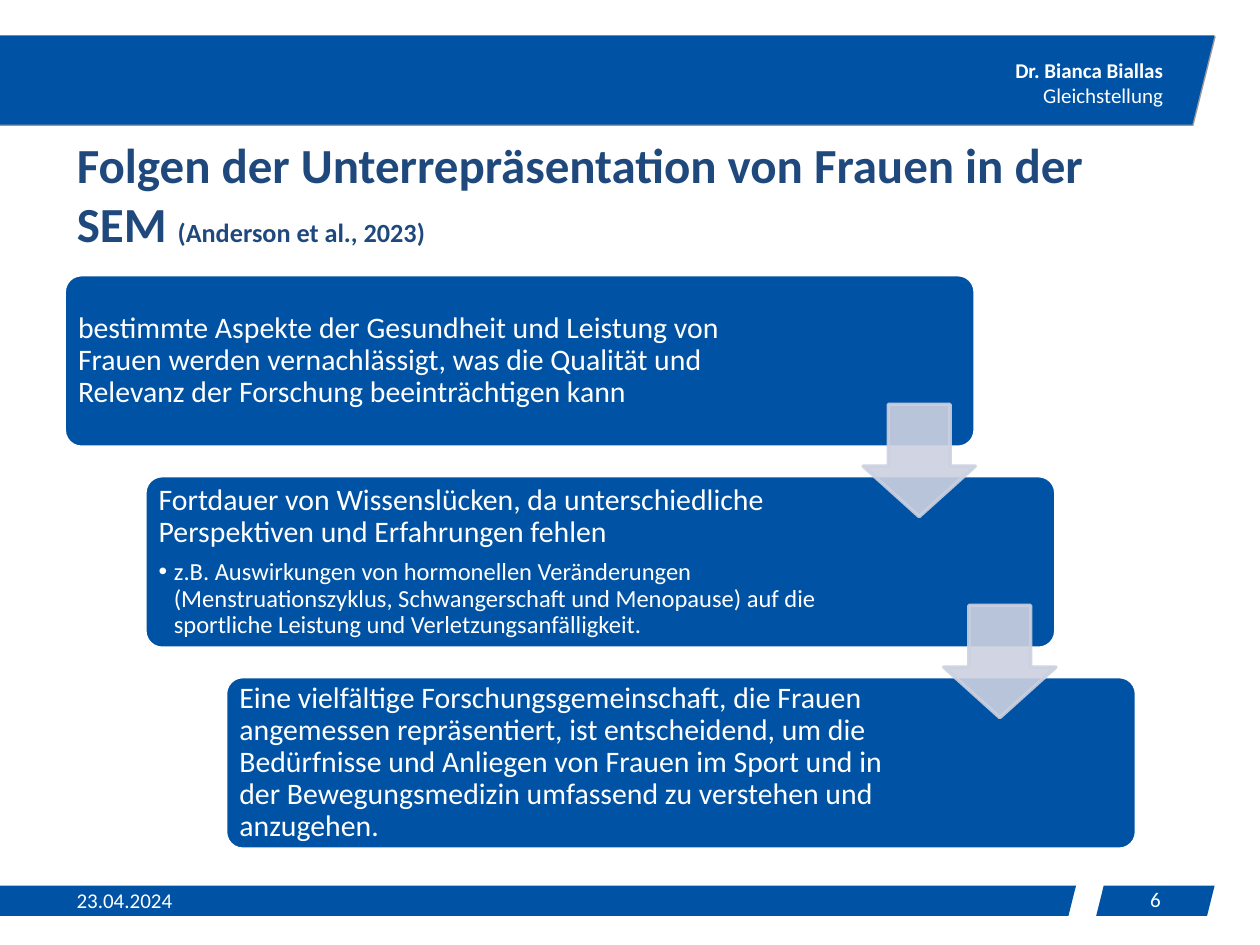
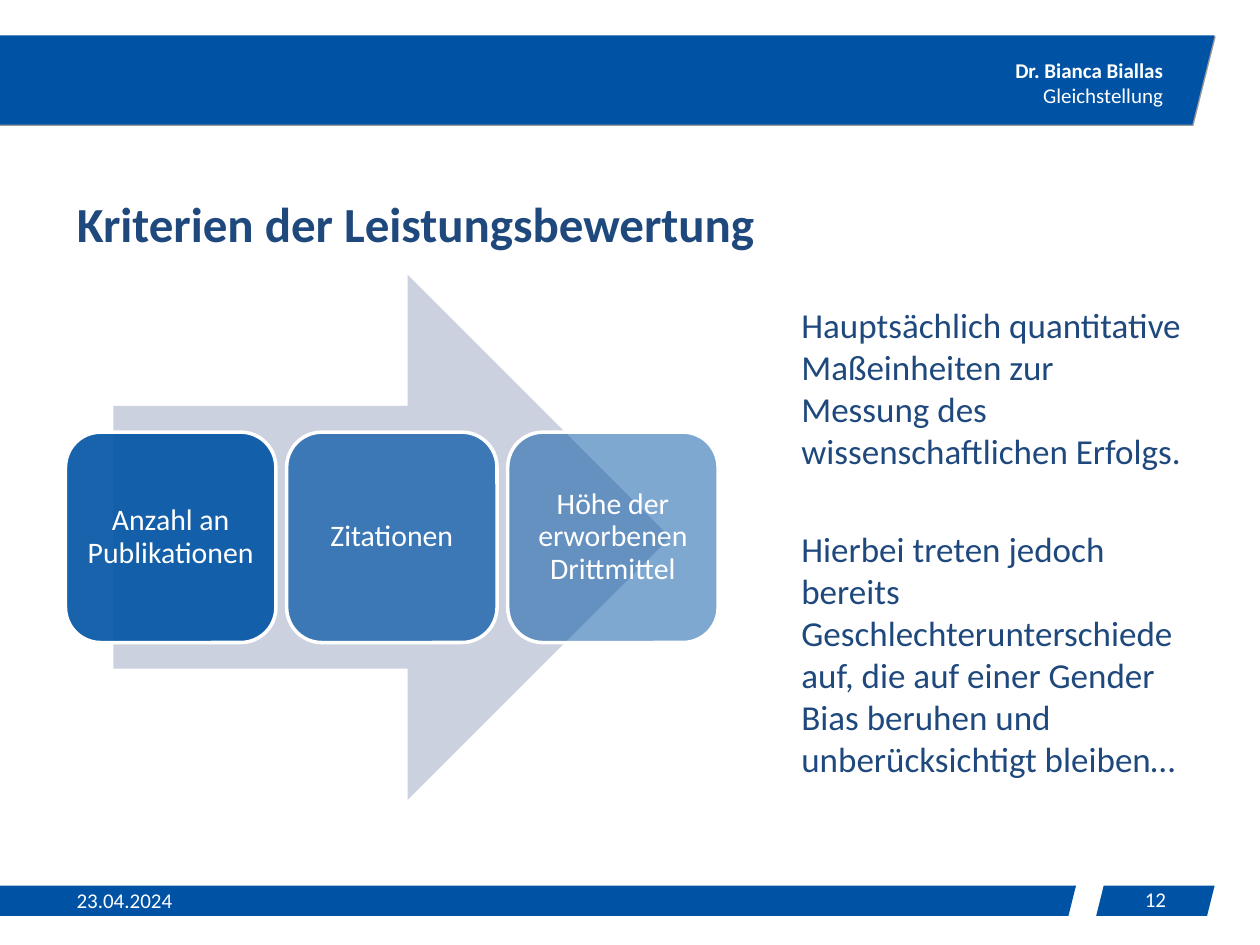
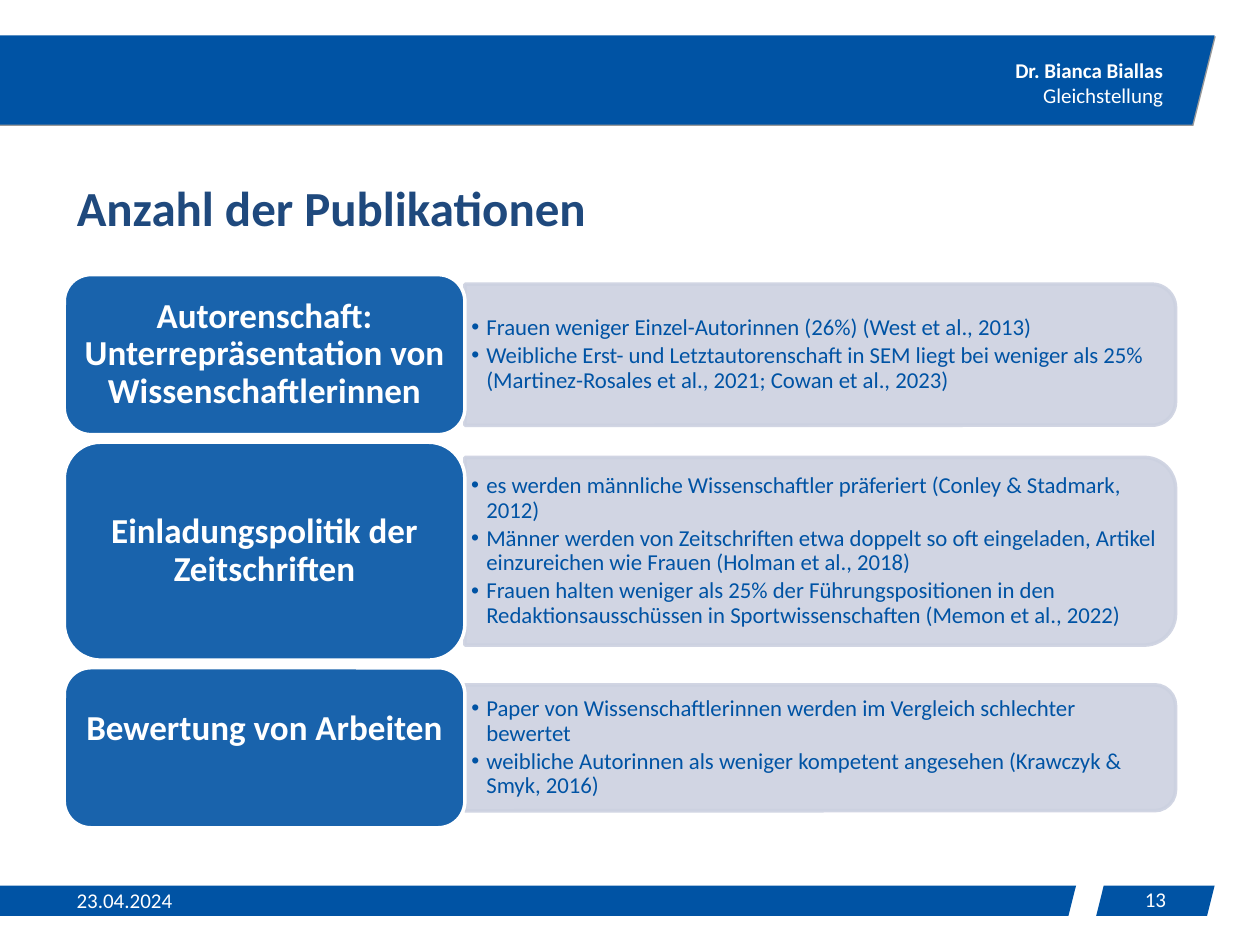
"""Builds three slides on equality in sports and exercise medicine research."""
from lxml import etree
from pptx import Presentation
from pptx.dml.color import RGBColor
from pptx.enum import shapes, text
from pptx.oxml import ns
from pptx.util import Inches, Pt

BLUE, NAVY, PALE, WHITE = "0053A4", "1F497D", "CCD1E0", "FFFFFF"
FONT = "Calibri"
KIND = shapes.MSO_SHAPE
LEFT, CENTER, RIGHT = text.PP_ALIGN.LEFT, text.PP_ALIGN.CENTER, text.PP_ALIGN.RIGHT
TOP, MIDDLE, BOTTOM = text.MSO_ANCHOR.TOP, text.MSO_ANCHOR.MIDDLE, text.MSO_ANCHOR.BOTTOM

DATE = "23.04.2024"
SPEAKER = ["Dr. Bianca Biallas", "Gleichstellung"]
BANDS = [(-0.2, 7.03, 8.74, 0.24), (8.7, 7.03, 0.94, 0.24), (-0.2, 0.28, 9.84, 0.71)]

CONSEQUENCES = [
    ("bestimmte Aspekte der Gesundheit und Leistung von Frauen werden vernachlässigt, "
     "was die Qualität und Relevanz der Forschung beeinträchtigen kann", None, 1.47),
    ("Fortdauer von Wissenslücken, da unterschiedliche Perspektiven und Erfahrungen fehlen",
     "z.B. Auswirkungen von hormonellen Veränderungen (Menstruationszyklus, Schwangerschaft "
     "und Menopause) auf die sportliche Leistung und Verletzungsanfälligkeit.", 1.6),
    ("Eine vielfältige Forschungsgemeinschaft, die Frauen angemessen repräsentiert, ist "
     "entscheidend, um die Bedürfnisse und Anliegen von Frauen im Sport und in der "
     "Bewegungsmedizin umfassend zu verstehen und anzugehen.", None, 1.6),
]
CRITERIA = [("Anzahl an Publikationen", 90), ("Zitationen", 70),
            ("Höhe der erworbenen Drittmittel", 50)]
ASSESSMENT = [
    "Hauptsächlich quantitative Maßeinheiten zur Messung des wissenschaftlichen Erfolgs.",
    "Hierbei treten jedoch bereits Geschlechterunterschiede auf, die auf einer Gender Bias "
    "beruhen und unberücksichtigt bleiben…",
]
PUBLICATIONS = [
    ("Autorenschaft: Unterrepräsentation von Wissenschaftlerinnen", 1.27, 1.12, 0.04, [
        "Frauen weniger Einzel-Autorinnen (26%) (West et al., 2013)",
        "Weibliche Erst- und Letztautorenschaft in SEM liegt bei weniger als 25% "
        "(Martinez-Rosales et al., 2021; Cowan et al., 2023)"]),
    ("Einladungspolitik der Zeitschriften", 1.73, 1.49, 0.04, [
        "es werden männliche Wissenschaftler präferiert (Conley & Stadmark, 2012)",
        "Männer werden von Zeitschriften etwa doppelt so oft eingeladen, Artikel "
        "einzureichen wie Frauen (Holman et al., 2018)",
        "Frauen halten weniger als 25% der Führungspositionen in den "
        "Redaktionsausschüssen in Sportwissenschaften (Memon et al., 2022)"]),
    ("Bewertung von Arbeiten", 1.27, 1.0, 0.34, [
        "Paper von Wissenschaftlerinnen werden im Vergleich schlechter bewertet",
        "weibliche Autorinnen als weniger kompetent angesehen (Krawczyk & Smyk, 2016)"]),
]


def rgb(value):
    """Turns a hex string into a colour."""
    return RGBColor.from_string(value)


def box(*lengths):
    """Converts left, top, width and height to inches."""
    return [Inches(length) for length in lengths]


def sub(parent, tag, **attributes):
    """Adds a drawing element with attributes."""
    return etree.SubElement(parent, ns.qn(tag), {k: str(v) for k, v in attributes.items()})


def add_figure(slide, kind, place, fill, line=None, opacity=100, adjust=()):
    """Adds a flat preset shape; pale outlines share the opacity of the fill."""
    figure = slide.shapes.add_shape(kind, *box(*place))
    figure.shadow.inherit = False
    for index, value in enumerate(adjust):
        figure.adjustments[index] = value
    figure.fill.solid()
    figure.fill.fore_color.rgb = rgb(fill)
    if line:
        figure.line.color.rgb = rgb(line)
        figure.line.width = Pt(2)
    else:
        figure.line.fill.background()
    if opacity < 100:
        for color in figure.element.spPr.iter(ns.qn("a:srgbClr")):
            if color.get("val") == fill:
                sub(color, "a:alpha", val=opacity * 1000)
    return figure


def style(paragraph, size, color, bold=False, align=LEFT, spacing=None):
    """Formats a paragraph and its runs."""
    paragraph.alignment = align
    paragraph.line_spacing = spacing
    for run in paragraph.runs:
        run.font.name, run.font.size, run.font.bold = FONT, Pt(size), bold
        run.font.color.rgb = rgb(color)


def bullet(paragraph, sign="•", indent=0.12):
    """Sets a hanging bullet, or none when the sign is empty."""
    properties = paragraph._p.get_or_add_pPr()
    properties.set("marL", str(Inches(indent)))
    properties.set("indent", str(-Inches(indent)))
    if sign:
        sub(properties, "a:buFont", typeface="Arial")
        sub(properties, "a:buChar", char=sign)
    else:
        sub(properties, "a:buNone")


def write(frame, lines, size, color, gap=0, sign=None, anchor=MIDDLE, margins=None, **look):
    """Fills a frame with one paragraph per line."""
    frame.word_wrap = True
    frame.auto_size = text.MSO_AUTO_SIZE.NONE
    frame.vertical_anchor = anchor
    if margins:
        (frame.margin_left, frame.margin_top,
         frame.margin_right, frame.margin_bottom) = box(*margins)
    frame.text = "\n".join(lines)
    for index, paragraph in enumerate(frame.paragraphs):
        if sign is not None:
            bullet(paragraph, sign, 0.12 if sign else 0)
        style(paragraph, size, color, **look)
        if index:
            paragraph.space_before = Pt(gap)


def add_text(slide, place, lines, size, color, **look):
    """Adds a text box."""
    frame = slide.shapes.add_textbox(*box(*place)).text_frame
    write(frame, lines, size, color, **look)
    return frame


def add_bands(slide, layout):
    """Draws the bands and the speaker, then moves them to the layout."""
    for place in BANDS:
        band = add_figure(slide, KIND.PARALLELOGRAM, place, BLUE)
        layout.shapes.element.append(band.element)
    effects = band.element.spPr.find(ns.qn("a:effectLst"))
    shadow = sub(effects, "a:outerShdw", blurRad=0, dist=Pt(1), dir=45 * 60000)
    sub(sub(shadow, "a:srgbClr", val="000000"), "a:alpha", val=40000)
    speaker = add_text(slide, (7.94, 0.41, 1.39, 0.5), SPEAKER, 12, WHITE,
                       anchor=TOP, align=RIGHT)
    speaker.word_wrap = False
    speaker.paragraphs[0].runs[0].font.bold = True
    layout.shapes.element.append(slide.shapes[-1].element)


def add_page(deck, heading, number, top=1.43, body=False):
    """Adds a slide with its title, date and page number."""
    slide = deck.slides.add_slide(deck.slide_layouts[1])
    title = slide.shapes.title
    title.left, title.top, title.width, title.height = box(0.51, top, 8.98, 0.62)
    write(title.text_frame, [heading], 28, NAVY, bold=True, anchor=BOTTOM)
    if not body:
        content = slide.placeholders[1].element
        content.getparent().remove(content)
    add_text(slide, (0.51, 6.98, 1.1, 0.32), [DATE], 12, WHITE)
    add_text(slide, (8.7, 6.98, 0.94, 0.31), [str(number)], 12, WHITE, align=CENTER)
    return slide


def add_consequences(deck):
    """Adds the staircase of consequences."""
    slide = add_page(deck, "Folgen der Unterrepräsentation von Frauen in der SEM ", 6)
    citation = slide.shapes.title.text_frame.paragraphs[0].add_run()
    citation.text = "(Anderson et al., 2023)"
    citation.font.name, citation.font.size, citation.font.bold = FONT, Pt(15), True
    citation.font.color.rgb = rgb(NAVY)
    steps = [(0.51 + 0.64 * i, 2.18 + 3.19 / 2 * i) for i in range(len(CONSEQUENCES))]
    for (left, top), (statement, example, right) in zip(steps, CONSEQUENCES):
        step = add_figure(slide, KIND.ROUNDED_RECTANGLE, (left, top, 7.23, 1.37),
                          BLUE, WHITE, adjust=[0.1])
        write(step.text_frame, [statement], 17, WHITE, spacing=0.9,
              margins=(0.07, 0.07, right, 0.07))
        if example:
            detail = step.text_frame.add_paragraph()
            detail.text = example
            bullet(detail)
            style(detail, 14, WHITE, spacing=0.9)
            detail.space_before = Pt(6)
    for left, top in steps[:-1]:
        add_figure(slide, KIND.DOWN_ARROW, (left + 6.34, top + 1.03, 0.89, 0.89),
                   PALE, PALE, 90, [0.55, 0.45])
    return slide


def add_criteria(deck):
    """Adds the criteria on an arrow, with the assessment beside it."""
    slide = add_page(deck, "Kriterien der Leistungsbewertung", 12, body=True)
    add_figure(slide, KIND.RIGHT_ARROW, (0.9, 2.18, 4.42, 4.17), PALE)
    for index, (criterion, opacity) in enumerate(CRITERIA):
        tile = add_figure(slide, KIND.ROUNDED_RECTANGLE,
                          (0.52 + 1.755 * index, 3.43, 1.67, 1.67), BLUE, WHITE, opacity)
        write(tile.text_frame, [criterion], 17, WHITE, align=CENTER, spacing=0.9,
              margins=[0.07] * 4)
    body = slide.placeholders[1]
    body.left, body.top, body.width, body.height = box(6.26, 2.36, 3.23, 4.17)
    write(body.text_frame, ASSESSMENT, 20, NAVY, gap=32, sign="", anchor=TOP)
    body.text_frame.paragraphs[0].space_before = Pt(0)


def add_publications(deck):
    """Adds the topics with their findings, row by row."""
    slide = add_page(deck, "Anzahl der Publikationen", 13, top=1.31)
    left, topic_width, panel_width, top = 0.51, 3.18, 5.64, 2.18
    panel_left = left + topic_width
    for topic, height, depth, bottom, findings in PUBLICATIONS:
        middle = top + height / 2
        panel = add_figure(
            slide, KIND.ROUND_2_SAME_RECTANGLE,
            (panel_left + (panel_width - depth) / 2, middle - panel_width / 2,
             depth, panel_width), PALE, PALE, 90)
        panel.rotation = 90
        add_text(slide, (panel_left, middle - 0.45 * depth,
                         panel_width - 0.05 * depth, 0.9 * depth),
                 findings, 13, BLUE, gap=2, sign="•", spacing=0.9,
                 margins=(0.05, 0.03, 0.05, 0.03))
        label = add_figure(slide, KIND.ROUNDED_RECTANGLE, (left, top, topic_width, height),
                           BLUE, WHITE, 90)
        write(label.text_frame, [topic], 20, WHITE, bold=True, align=CENTER, spacing=0.9,
              margins=(0.08, 0.04, 0.08, bottom))
        top += height + 0.06


def main():
    """Builds and saves the deck."""
    deck = Presentation()
    deck.slide_width, deck.slide_height = Inches(10), Inches(7.5)
    first = add_consequences(deck)
    add_bands(first, deck.slide_layouts[1])
    add_criteria(deck)
    add_publications(deck)
    deck.save("out.pptx")


if __name__ == "__main__":
    main()
